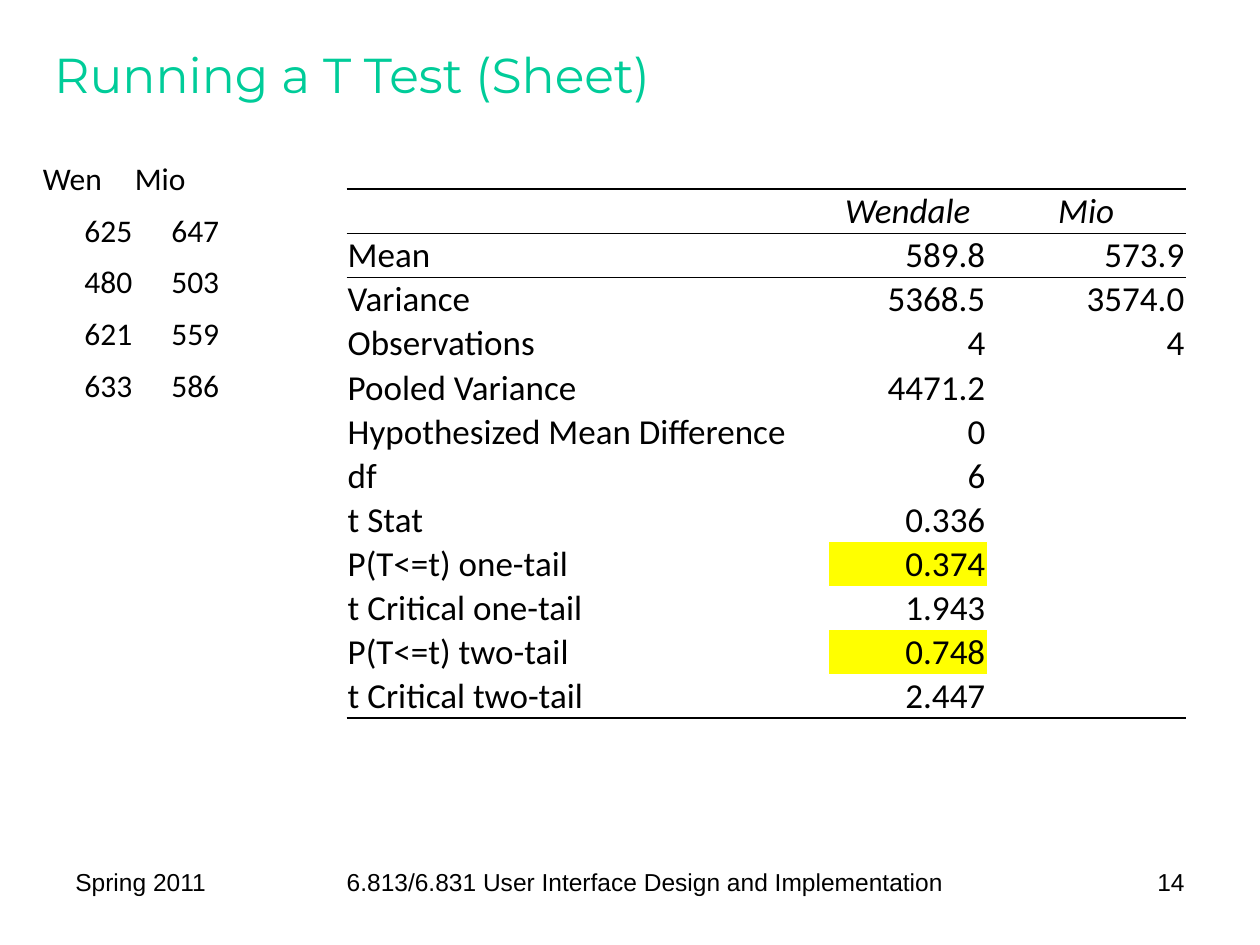
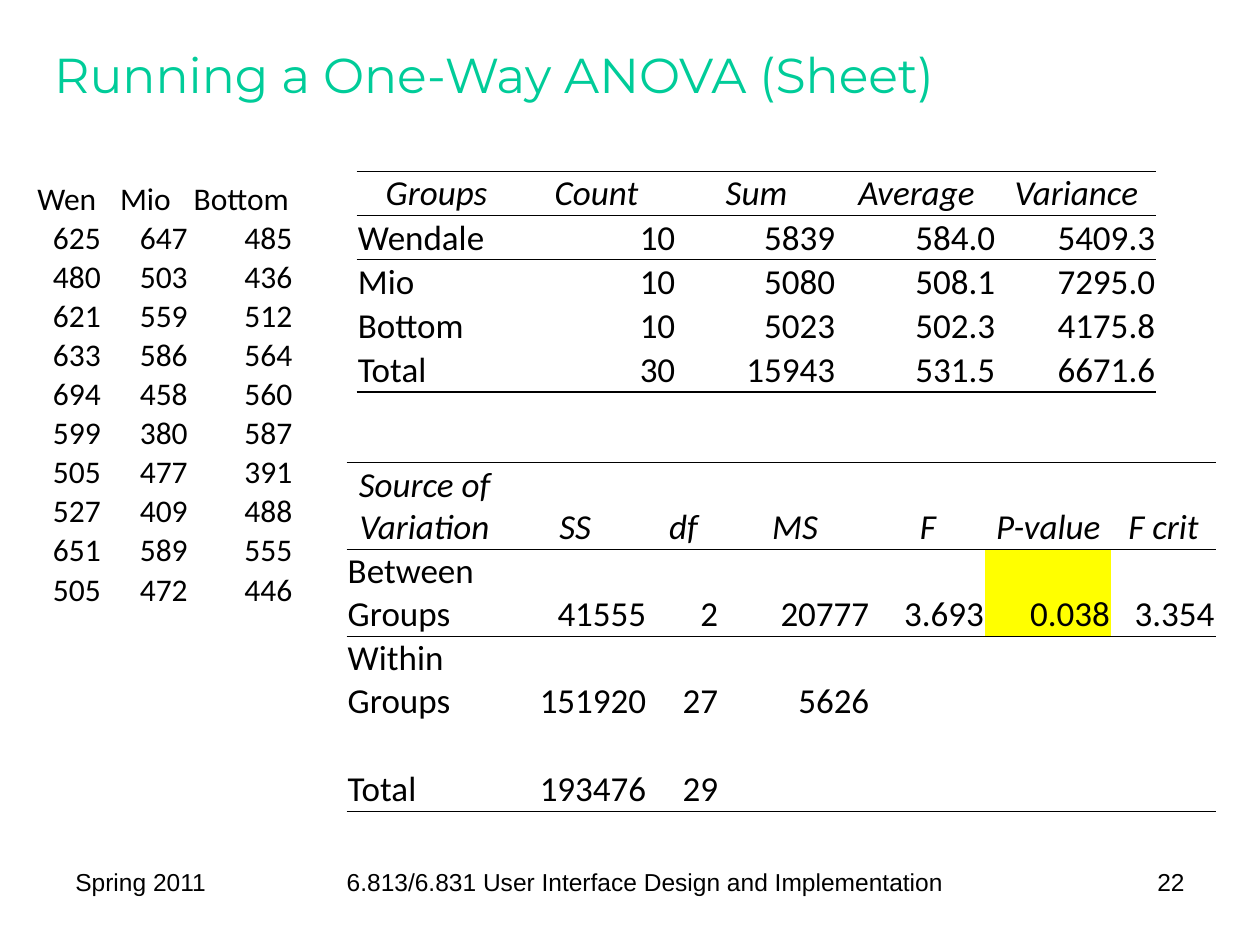
from dataclasses import dataclass

from lxml.etree import SubElement
from pptx import Presentation
from pptx.dml.color import RGBColor
from pptx.enum.text import MSO_ANCHOR as Anchor, PP_ALIGN as Align
from pptx.oxml.ns import qn
from pptx.util import Inches, Pt

GREEN = RGBColor(0x00, 0xCC, 0x99)
BLACK = RGBColor(0x00, 0x00, 0x00)
YELLOW = RGBColor(0xFF, 0xFF, 0x00)

TITLE_FONT, TABLE_FONT, FOOTER_FONT = "Montserrat", "Calibri", "Arial"
PLAIN_TABLE_STYLE = "{2D5ABB26-0587-4C30-8999-92F81FD0307C}"  # no style, no grid
THICK, THIN = Pt(1), Pt(0.5)


@dataclass(frozen=True)
class FooterPart:
    text: str
    left: float
    width: float
    align: Align


@dataclass(frozen=True)
class Grid:
    """A table; rows shorter than the column list end in empty cells."""
    left: float
    top: float
    columns: tuple[float, ...]
    row_heights: tuple[float, ...]
    rows: tuple[tuple[str, ...], ...]


@dataclass(frozen=True)
class SampleGrid(Grid):
    """Raw measurements, without rules."""
    header_align: Align = Align.CENTER


@dataclass(frozen=True)
class ResultGrid(Grid):
    """Test results, with ruled header and labels in the first column."""
    highlights: tuple[tuple[int, int], ...] = ()


@dataclass(frozen=True)
class Page:
    title: str
    number: int
    grids: tuple[Grid, ...]


T_TEST = Page("Running a T Test (Sheet)", 14, (
    SampleGrid(0.33, 1.17, (0.73, 0.69), (0.41,) * 5, (
        ("Wen", "Mio"),
        ("625", "647"),
        ("480", "503"),
        ("621", "559"),
        ("633", "586"),
    ), header_align=Align.LEFT),
    ResultGrid(2.75, 1.5, (3.83, 1.25, 1.58), (0.35,) * 12, (
        ("", "Wendale", "Mio"),
        ("Mean", "589.8", "573.9"),
        ("Variance", "5368.5", "3574.0"),
        ("Observations", "4", "4"),
        ("Pooled Variance", "4471.2"),
        ("Hypothesized Mean Difference", "0"),
        ("df", "6"),
        ("t Stat", "0.336"),
        ("P(T<=t) one-tail", "0.374"),
        ("t Critical one-tail", "1.943"),
        ("P(T<=t) two-tail", "0.748"),
        ("t Critical two-tail", "2.447"),
    ), highlights=((8, 1), (10, 1))),
))

ANOVA = Page("Running a One-Way ANOVA (Sheet)", 22, (
    SampleGrid(0.25, 1.42, (0.56, 0.69, 0.83), (0.31,) * 11, (
        ("Wen", "Mio", "Bottom"),
        ("625", "647", "485"),
        ("480", "503", "436"),
        ("621", "559", "512"),
        ("633", "586", "564"),
        ("694", "458", "560"),
        ("599", "380", "587"),
        ("505", "477", "391"),
        ("527", "409", "488"),
        ("651", "589", "555"),
        ("505", "472", "446"),
    )),
    ResultGrid(2.83, 1.36, (1.27,) * 5, (0.35,) * 5, (
        ("Groups", "Count", "Sum", "Average", "Variance"),
        ("Wendale", "10", "5839", "584.0", "5409.3"),
        ("Mio", "10", "5080", "508.1", "7295.0"),
        ("Bottom", "10", "5023", "502.3", "4175.8"),
        ("Total", "30", "15943", "531.5", "6671.6"),
    )),
    ResultGrid(2.75, 3.67, (1.24, 1.15, 0.57, 1.2, 0.91, 1, 0.83),
               (0.69, 0.69, 0.69, 0.35, 0.35), (
        ("Source of Variation", "SS", "df", "MS", "F", "P-value", "F crit"),
        ("Between Groups", "41555", "2", "20777", "3.693", "0.038", "3.354"),
        ("Within Groups", "151920", "27", "5626"),
        (),
        ("Total", "193476", "29"),
    ), highlights=((1, 5),)),
))


def add_span(para, text: str, font: str, size: int, color: RGBColor = BLACK,
             italic: bool = False) -> None:
    span = para.add_run()
    span.text = text
    span.font.name = font
    span.font.size = Pt(size)
    span.font.color.rgb = color
    span.font.bold = False
    span.font.italic = italic


def add_title(slide, text: str) -> None:
    title = slide.shapes.title
    title.left, title.top = Inches(0.33), Inches(0.17)
    title.width, title.height = Inches(9.25), Inches(0.83)
    title.text_frame.vertical_anchor = Anchor.MIDDLE
    para = title.text_frame.paragraphs[0]
    para.alignment = Align.LEFT
    add_span(para, text, TITLE_FONT, 28, GREEN)


def add_footer(slide, number: int) -> None:
    parts = (
        FooterPart("Spring 2011", 0.5, 1.5, Align.LEFT),
        FooterPart("6.813/6.831 User Interface Design and Implementation",
                   2.08, 6.08, Align.CENTER),
        FooterPart(str(number), 8.25, 1.25, Align.RIGHT),
    )
    for part in parts:
        box = slide.shapes.add_textbox(Inches(part.left), Inches(6.83),
                                       Inches(part.width), Inches(0.52))
        box.text_frame.word_wrap = True
        para = box.text_frame.paragraphs[0]
        para.alignment = part.align
        add_span(para, part.text, FOOTER_FONT, 14)


def add_rule(cell, side: str, width: int) -> None:
    line = SubElement(cell._tc.get_or_add_tcPr(), qn(f"a:{side}"), w=str(width))
    fill = SubElement(line, qn("a:solidFill"))
    SubElement(fill, qn("a:srgbClr"), val=str(BLACK))


def rule_cell(cell, row: int, last_row: int) -> None:
    if row <= 1:
        add_rule(cell, "lnT", THIN if row else THICK)
    if row == 0:
        add_rule(cell, "lnB", THIN)
    elif row == last_row:
        add_rule(cell, "lnB", THICK)


def cell_align(grid: Grid, row: int, column: int) -> Align:
    if row == 0:
        return grid.header_align if isinstance(grid, SampleGrid) else Align.CENTER
    if column == 0 and isinstance(grid, ResultGrid):
        return Align.LEFT
    return Align.RIGHT


def add_grid(slide, grid: Grid) -> None:
    is_result = isinstance(grid, ResultGrid)
    frame = slide.shapes.add_table(
        len(grid.rows), len(grid.columns), Inches(grid.left), Inches(grid.top),
        Inches(sum(grid.columns)), Inches(sum(grid.row_heights)))
    table = frame.table
    table.first_row = table.horz_banding = False
    table._tbl.tblPr.find(qn("a:tableStyleId")).text = PLAIN_TABLE_STYLE
    for column, width in zip(table.columns, grid.columns):
        column.width = Inches(width)
    for row, height in zip(table.rows, grid.row_heights):
        row.height = Inches(height)

    for r, texts in enumerate(grid.rows):
        for c in range(len(grid.columns)):
            cell = table.cell(r, c)
            cell.margin_left = cell.margin_right = cell.margin_top = Inches(0.01)
            cell.margin_bottom = 0
            cell.vertical_anchor = Anchor.BOTTOM
            if is_result:
                rule_cell(cell, r, len(grid.rows) - 1)
            if is_result and (r, c) in grid.highlights:
                cell.fill.solid()
                cell.fill.fore_color.rgb = YELLOW
            else:
                cell.fill.background()
            if c < len(texts) and texts[c]:
                para = cell.text_frame.paragraphs[0]
                para.alignment = cell_align(grid, r, c)
                add_span(para, texts[c], TABLE_FONT, 20 if is_result else 18,
                         italic=is_result and r == 0)


def main() -> None:
    deck = Presentation()
    deck.slide_width, deck.slide_height = Inches(10), Inches(7.5)
    title_only = deck.slide_layouts[5]
    for page in (T_TEST, ANOVA):
        slide = deck.slides.add_slide(title_only)
        add_title(slide, page.title)
        add_footer(slide, page.number)
        for grid in page.grids:
            add_grid(slide, grid)
    deck.save("out.pptx")


if __name__ == "__main__":
    main()
